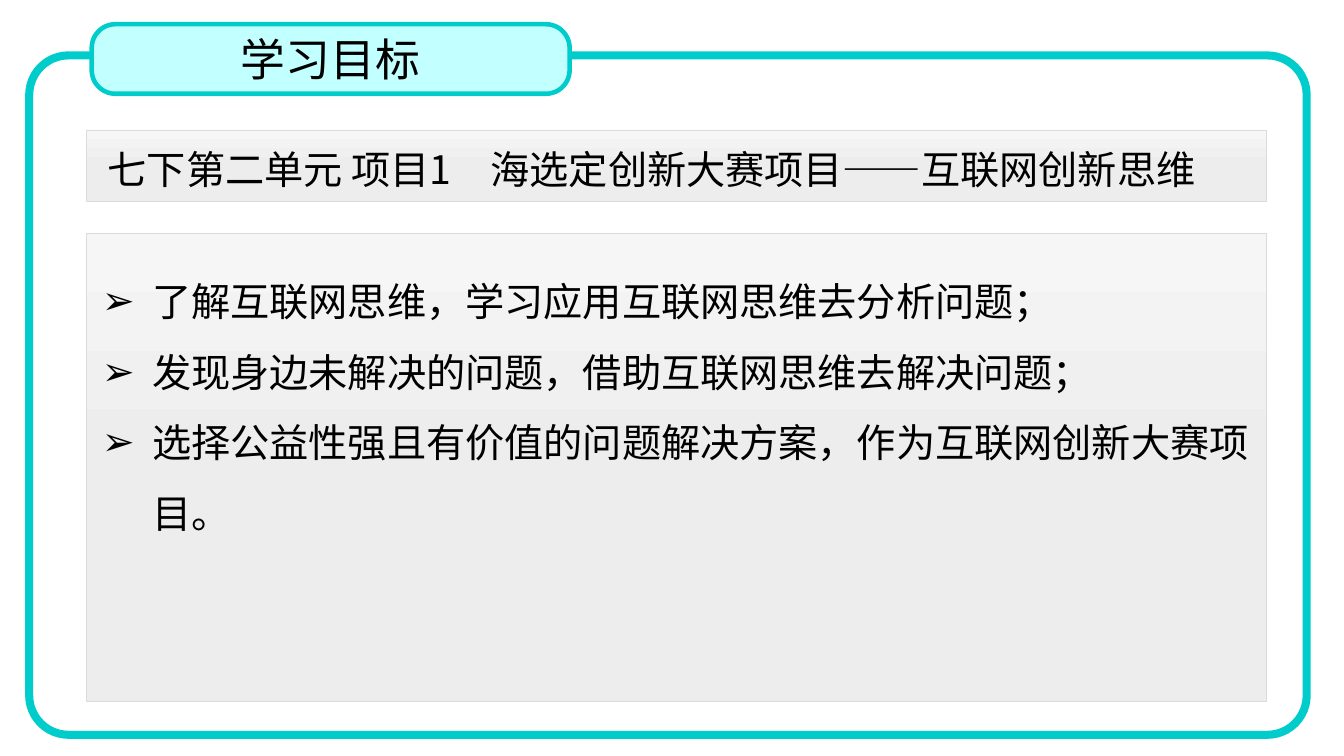
from copy import deepcopy

from lxml import etree
from pptx import Presentation
from pptx import util as u
from pptx.dml.color import RGBColor
from pptx.enum import shapes, text
from pptx.oxml.ns import qn

FONT = "Noto Sans CJK SC"
TEAL = "00CCCC"
GOALS = [
    "了解互联网思维，学习应用互联网思维去分析问题；",
    "发现身边未解决的问题，借助互联网思维去解决问题；",
    "选择公益性强且有价值的问题解决方案，作为互联网创新大赛项目。",
]


def paint(color, value):
    """Set a colour from a hex string."""
    color.rgb = RGBColor.from_string(value)


def box(slide, kind, place, line, width):
    """Add an unfilled, shadowless shape with an outline."""
    shape = slide.shapes.add_shape(kind, *map(u.Inches, place))
    shape.shadow.inherit = False
    shape.fill.background()
    paint(shape.line.color, line)
    shape.line.width = u.Pt(width)
    return shape


def panel(slide, place):
    """Add a grey panel shaded from top to bottom."""
    shape = box(slide, shapes.MSO_SHAPE.RECTANGLE, place, "DBDBDB", 0.5)
    shape.fill.gradient()
    shape.fill.gradient_angle = 270
    stops = shape.element.find(".//" + qn("a:gsLst"))
    stops.append(deepcopy(stops[-1]))
    shades = zip(shape.fill.gradient_stops, (0, 0.5, 1), ("F6F6F6", "EDEDED", "EBEBEB"))
    for stop, position, shade in shades:
        stop.position = position
        paint(stop.color, shade)


def rounded(slide, place, radius, width):
    """Add a teal rounded outline."""
    shape = box(slide, shapes.MSO_SHAPE.ROUNDED_RECTANGLE, place, TEAL, width)
    shape.adjustments[0] = radius
    return shape


def write(holder, place, lines, size, latin=FONT, spacing=1.0):
    """Place a text holder and fill it with formatted paragraphs."""
    holder.left, holder.top, holder.width, holder.height = map(u.Inches, place)
    frame = holder.text_frame
    frame.text = "\n".join(lines)
    frame.word_wrap = True
    frame.auto_size = text.MSO_AUTO_SIZE.NONE
    for paragraph in frame.paragraphs:
        paragraph.line_spacing = spacing
        paragraph.space_before = u.Pt(0)
        for run in paragraph.runs:
            run.font.size = u.Pt(size)
            run.font.name = latin
            paint(run.font.color, "000000")
            etree.SubElement(run.font._element, qn("a:ea"), typeface=FONT)


def add_arrow_bullets(holder):
    """Give each paragraph a hanging arrow bullet."""
    for paragraph in holder.text_frame.paragraphs:
        properties = paragraph._p.get_or_add_pPr()
        properties.set("marL", str(u.Inches(0.5)))
        properties.set("indent", str(-u.Inches(0.5)))
        etree.SubElement(properties, qn("a:buChar"), char="➢")


def bring_to_front(holder):
    """Move a text holder above the shapes drawn so far."""
    holder.element.getparent().append(holder.element)


def main():
    """Build the learning goals slide."""
    deck = Presentation()
    deck.slide_width, deck.slide_height = u.Inches(13.33), u.Inches(7.5)
    slide = deck.slides.add_slide(deck.slide_layouts[1])
    title, goals = slide.placeholders

    panel(slide, (0.86, 2.32, 11.7, 4.64))
    panel(slide, (0.86, 1.29, 11.7, 0.71))
    rounded(slide, (0.29, 0.55, 12.67, 6.74), 0.058, 5.75)
    tab_place = (0.91, 0.24, 4.74, 0.69)
    tab = rounded(slide, tab_place, 0.341, 3.25)
    tab.fill.solid()
    paint(tab.fill.fore_color, "C2FFFF")

    bring_to_front(title)
    write(title, tab_place, ["学习目标"], 32, latin="Arial")
    title.text_frame.vertical_anchor = text.MSO_ANCHOR.MIDDLE
    title.text_frame.paragraphs[0].alignment = text.PP_ALIGN.CENTER

    project_place = (0.97, 1.16, 11.59, 0.81)
    project = slide.shapes.add_textbox(*map(u.Inches, project_place))
    project_name = "七下第二单元 项目1　海选定创新大赛项目——互联网创新思维"
    write(project, project_place, [project_name], 28, spacing=1.5)

    bring_to_front(goals)
    write(goals, (0.91, 2.47, 11.59, 3.63), GOALS, 28, spacing=1.5)
    add_arrow_bullets(goals)
    deck.save("out.pptx")


if __name__ == "__main__":
    main()
